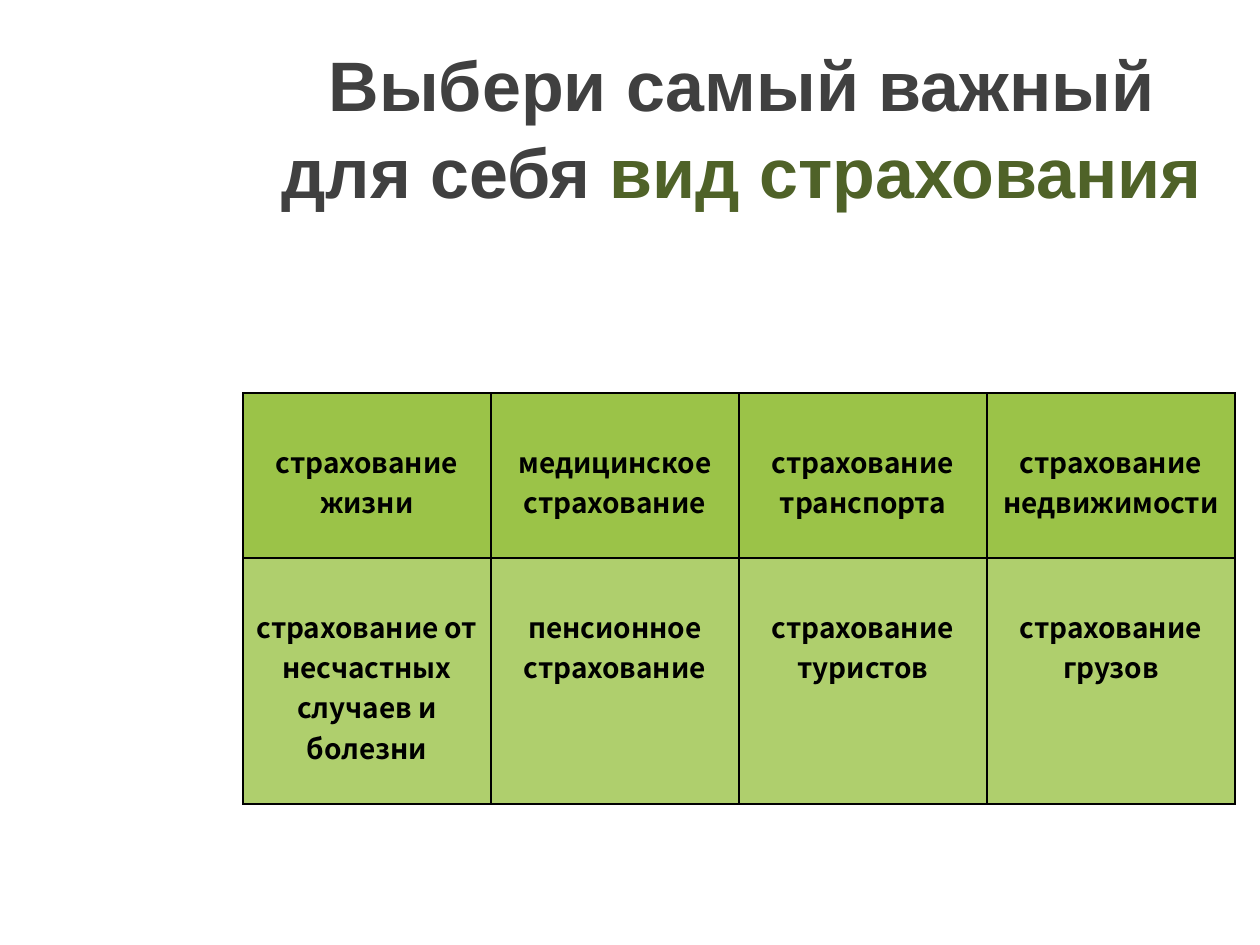
from lxml import etree
from pptx import Presentation
from pptx.dml.color import RGBColor
from pptx.enum.text import MSO_ANCHOR, MSO_AUTO_SIZE, PP_ALIGN
from pptx.oxml.ns import qn
from pptx.util import Pt

CENTER = PP_ALIGN.CENTER
TOP, MIDDLE = MSO_ANCHOR.TOP, MSO_ANCHOR.MIDDLE
NO_AUTOFIT = MSO_AUTO_SIZE.NONE
PX = 914400 // 126
COLORS = {
    "title": "404040",
    "accent": "4F6228",
    "text": "000000",
    "border": "000000",
    "row1": "9BC348",
    "row2": "AFCF6D",
}


def rgb(name):
    return RGBColor.from_string(COLORS[name])


def add_borders(cell):
    tc_pr = cell._tc.get_or_add_tcPr()
    for i, side in enumerate(("lnL", "lnR", "lnT", "lnB")):
        ln = etree.Element(qn("a:" + side), w=str(Pt(1)))
        fill = etree.SubElement(ln, qn("a:solidFill"))
        etree.SubElement(fill, qn("a:srgbClr"), val=COLORS["border"])
        tc_pr.insert(i, ln)


prs = Presentation()
prs.slide_width, prs.slide_height = 1260 * PX, 945 * PX
s = prs.slides.add_slide(prs.slide_layouts[5])

# Title
title = s.shapes.title
title.left, title.top = 223 * PX, 88 * PX
title.width, title.height = 1037 * PX, 148 * PX
tf = title.text_frame
tf.auto_size = NO_AUTOFIT
tf.word_wrap = True
tf.vertical_anchor = MIDDLE
tf.margin_bottom = 80 * PX
p = tf.paragraphs[0]
p.alignment = CENTER
p.line_spacing = 1.04
p.font.name, p.font.size, p.font.bold = "Arial", Pt(40), True
p.font.color.rgb = rgb("title")
p.add_run().text = "Выбери самый важный"
p.add_line_break()
p.add_run().text = "для себя "
r = p.add_run()
r.text = "вид страхования"
r.font.color.rgb = rgb("accent")

# Table of insurance types
rows = [
    ["страхование\nжизни", "медицинское\nстрахование",
     "страхование\nтранспорта", "страхование\nнедвижимости"],
    ["страхование от несчастных\nслучаев и\nболезни", "пенсионное\nстрахование",
     "страхование\nтуристов", "страхование\nгрузов"],
]
row_heights = [165, 246]
table = s.shapes.add_table(2, 4, 243 * PX, 393 * PX, 992 * PX,
                           sum(row_heights) * PX).table
for col in table.columns:
    col.width = 248 * PX
for i, (texts, height) in enumerate(zip(rows, row_heights)):
    table.rows[i].height = height * PX
    for j, text in enumerate(texts):
        cell = table.cell(i, j)
        cell.fill.solid()
        cell.fill.fore_color.rgb = rgb(f"row{i + 1}")
        add_borders(cell)
        cell.vertical_anchor = TOP
        cell.margin_top = 48 * PX
        cell.text = text
        for p in cell.text_frame.paragraphs:
            p.alignment = CENTER
            p.font.name, p.font.size, p.font.bold = "Noto Sans CJK KR", Pt(16), True
            p.font.color.rgb = rgb("text")

prs.save("out.pptx")
